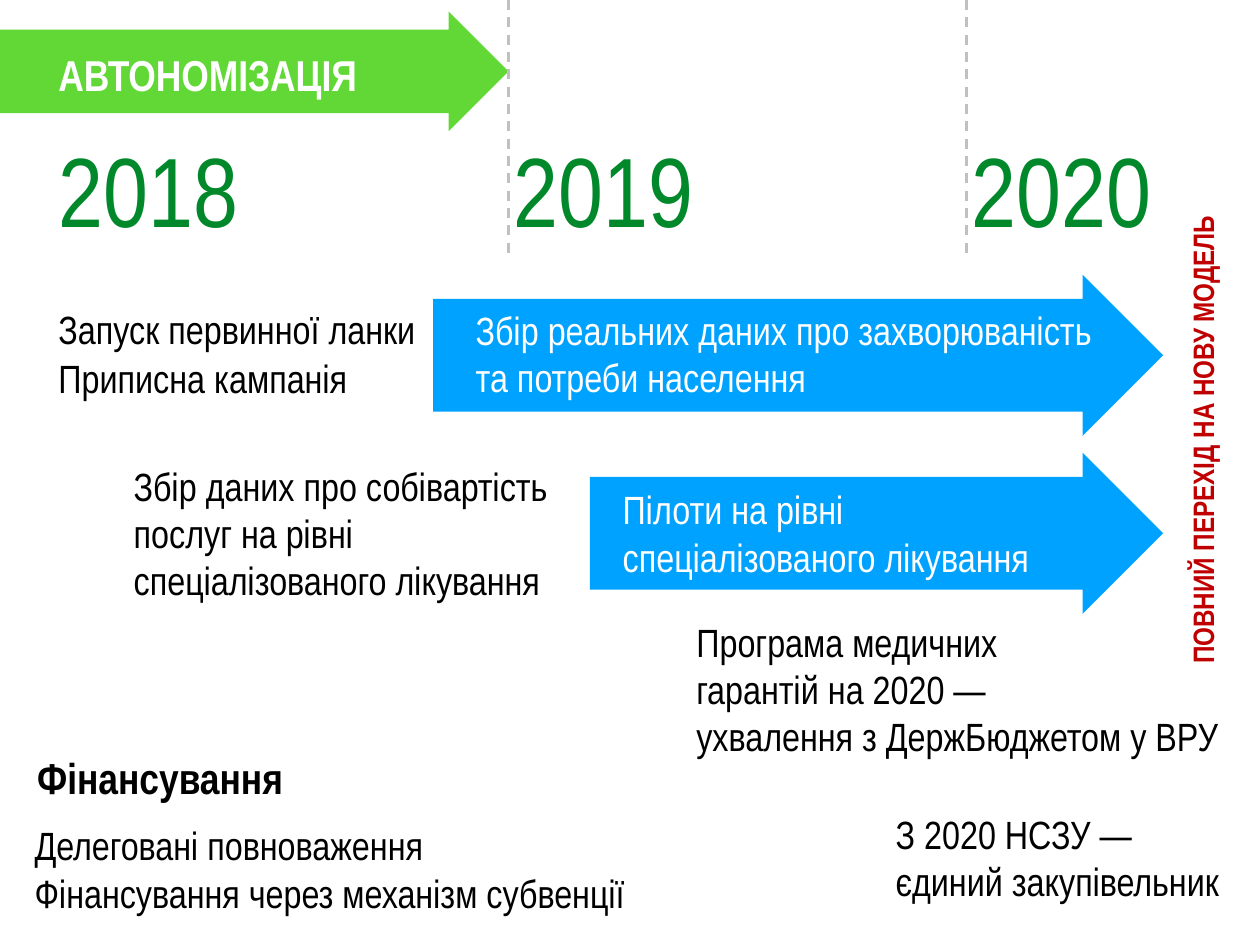
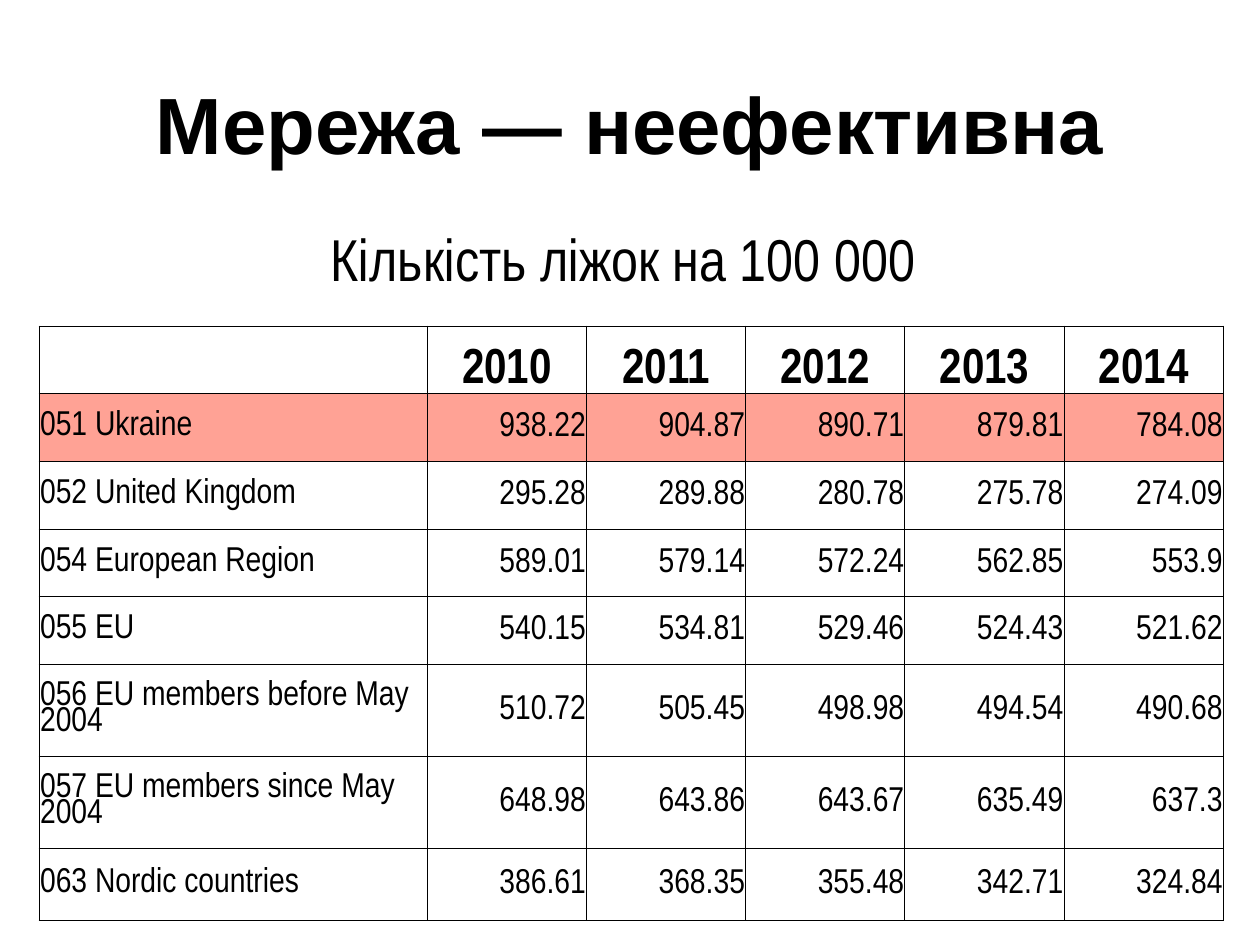
from dataclasses import dataclass

from lxml import etree
from pptx import Presentation
from pptx.dml.color import RGBColor
from pptx.enum.dml import MSO_LINE
from pptx.enum.shapes import MSO_CONNECTOR, MSO_SHAPE
from pptx.enum.text import MSO_ANCHOR, PP_ALIGN
from pptx.oxml.ns import qn
from pptx.slide import Slide
from pptx.table import _Cell
from pptx.text.text import TextFrame
from pptx.util import Pt

RIGHT_ARROW = MSO_SHAPE.RIGHT_ARROW
STRAIGHT = MSO_CONNECTOR.STRAIGHT
DASH = MSO_LINE.DASH
TOP, MIDDLE, BOTTOM = MSO_ANCHOR.TOP, MSO_ANCHOR.MIDDLE, MSO_ANCHOR.BOTTOM
LEFT, CENTER, RIGHT = PP_ALIGN.LEFT, PP_ALIGN.CENTER, PP_ALIGN.RIGHT

COLORS = {
    "black": "000000",
    "white": "FFFFFF",
    "lime": "61D836",
    "blue": "00A2FF",
    "green": "00882B",
    "red": "C00000",
    "grey": "C1BFBF",
    "salmon": "FFA295",
}
NARROW = "Arial Narrow"
INSET = 4.3
BLANK_LAYOUT = 6


@dataclass(frozen=True)
class Style:
    size: float
    color: str = "black"
    bold: bool = False
    font: str = NARROW
    align: PP_ALIGN = LEFT
    anchor: MSO_ANCHOR = MIDDLE
    space_before: float = 0
    line_spacing: float = 1


@dataclass(frozen=True)
class Label:
    left: float
    top: float
    width: float
    height: float
    text: str
    style: Style
    wrap: bool = True
    vertical: bool = False


@dataclass(frozen=True)
class Arrow:
    left: float
    top: float
    width: float
    height: float
    color: str


TITLE = Style(64.8, bold=True, font="Arial", align=CENTER)
SUBTITLE = Style(48, align=CENTER)
HEADING = Style(35.1, bold=True)
BANNER = Style(35.1, "white", bold=True)
YEAR = Style(80, "green", anchor=TOP)
BODY = Style(32, space_before=24)
ARROW_TEXT = Style(32, "white", space_before=24)
SIDE = Style(24, "red", bold=True, align=CENTER)
HEADER_CELL = Style(40, bold=True, align=CENTER, anchor=BOTTOM)
NAME_CELL = Style(28, line_spacing=0.8)
VALUE_CELL = Style(28, align=RIGHT)

ARROWS = [
    Arrow(-162, 9.4, 575.3, 97.2, "lime"),
    Arrow(479.5, 367.9, 465.8, 131, "blue"),
    Arrow(352.1, 223.2, 593.2, 131, "blue"),
]
YEAR_LEFTS = {"2018": 43.2, "2019": 413.3, "2020": 785.5}
TIMELINE_LABELS = [
    Label(43.2, 244.1, 301.7, 46.8, "Запуск первинної ланки", BODY, wrap=False),
    Label(43.2, 283.7, 244.8, 46.8, "Приписна кампанія", BODY, wrap=False),
    Label(382.3, 244.1, 511.9, 85.7,
          "Збір реальних даних про захворюваність\nта потреби населення", ARROW_TEXT),
    Label(104.4, 370.8, 367.2, 124.6,
          "Збір даних про собівартість послуг на рівні спеціалізованого лікування", BODY),
    Label(501.8, 390.2, 343.4, 85.7,
          "Пілоти на рівні\nспеціалізованого лікування", ARROW_TEXT, wrap=False),
    Label(23.8, 663.1, 659.5, 85.7,
          "Делеговані повноваження\nФінансування через механізм субвенції", BODY),
    Label(958.3, 156.2, 37.4, 402.5, "ПОВНИЙ ПЕРЕХІД НА НОВУ МОДЕЛЬ", SIDE, vertical=True),
    Label(561.6, 497.5, 450.7, 124.6,
          "Програма медичних\nгарантій на 2020 —\nухвалення з ДержБюджетом у ВРУ", BODY),
    Label(723.6, 653.8, 290, 85.7, "З 2020 НСЗУ —\nєдиний закупівельник", BODY),
    Label(25.9, 595.4, 242.6, 72, "Фінансування", HEADING),
    Label(43.2, 33.1, 356.4, 54, "АВТОНОМІЗАЦІЯ", BANNER),
]

BEDS_LABELS = [
    Label(100, 44.6, 823.7, 110.2, "Мережа — неефективна", TITLE),
    Label(100, 154.8, 823.7, 110.2, "Кількість ліжок на 100 000 ", SUBTITLE),
]
BEDS = [
    ("", "2010", "2011", "2012", "2013", "2014"),
    ("051 Ukraine", "938.22", "904.87", "890.71", "879.81", "784.08"),
    ("052 United Kingdom", "295.28", "289.88", "280.78", "275.78", "274.09"),
    ("054 European Region", "589.01", "579.14", "572.24", "562.85", "553.9"),
    ("055 EU", "540.15", "534.81", "529.46", "524.43", "521.62"),
    ("056 EU members before May 2004", "510.72", "505.45", "498.98", "494.54", "490.68"),
    ("057 EU members since May 2004", "648.98", "643.86", "643.67", "635.49", "637.3"),
    ("063 Nordic countries", "386.61", "368.35", "355.48", "342.71", "324.84"),
]
COLUMN_WIDTHS = [315.4] + [129.4] * 5
ROW_HEIGHTS = [55] * 5 + [74.8] * 2 + [58.5]
HIGHLIGHT_ROW = 1


def rgb(name: str) -> RGBColor:
    return RGBColor.from_string(COLORS[name])


def write_text(frame: TextFrame, text: str, style: Style) -> None:
    para = frame.paragraphs[0]
    para.alignment = style.align
    para.space_before = Pt(style.space_before)
    para.line_spacing = style.line_spacing
    for index, line in enumerate(text.split("\n")):
        if index:
            para.add_line_break()
        span = para.add_run()
        span.text = line
        span.font.name = style.font
        span.font.size = Pt(style.size)
        span.font.bold = style.bold
        span.font.color.rgb = rgb(style.color)


def draw_label(page: Slide, label: Label) -> None:
    box = page.shapes.add_textbox(
        Pt(label.left), Pt(label.top), Pt(label.width), Pt(label.height))
    frame = box.text_frame
    frame.word_wrap = label.wrap
    frame.vertical_anchor = label.style.anchor
    frame.margin_left = frame.margin_right = Pt(INSET)
    frame.margin_top = frame.margin_bottom = Pt(INSET)
    if label.vertical:
        box.element.txBody.find(qn("a:bodyPr")).set("vert", "vert270")
    write_text(frame, label.text, label.style)


def draw_arrow(page: Slide, arrow: Arrow) -> None:
    shape = page.shapes.add_shape(
        RIGHT_ARROW, Pt(arrow.left), Pt(arrow.top), Pt(arrow.width), Pt(arrow.height))
    shape.adjustments[0] = 0.7
    shape.adjustments[1] = 0.5
    shape.shadow.inherit = False
    shape.fill.solid()
    shape.fill.fore_color.rgb = rgb(arrow.color)
    shape.line.fill.background()


def draw_divider(page: Slide, left: float) -> None:
    divider = page.shapes.add_connector(STRAIGHT, Pt(left), Pt(0), Pt(left), Pt(206))
    divider.line.color.rgb = rgb("grey")
    divider.line.width = Pt(2)
    divider.line.dash_style = DASH
    etree.SubElement(divider.element.spPr, qn("a:effectLst"))


def set_borders(cell: _Cell) -> None:
    properties = cell._tc.get_or_add_tcPr()
    for index, side in enumerate(("a:lnL", "a:lnR", "a:lnT", "a:lnB")):
        border = etree.Element(qn(side), w=str(Pt(1)))
        fill = etree.SubElement(border, qn("a:solidFill"))
        etree.SubElement(fill, qn("a:srgbClr"), val=COLORS["black"])
        properties.insert(index, border)


def draw_cell(cell: _Cell, text: str, style: Style, highlighted: bool) -> None:
    cell.margin_left = cell.margin_right = cell.margin_top = Pt(0.7)
    cell.margin_bottom = Pt(0)
    cell.vertical_anchor = style.anchor
    if highlighted:
        cell.fill.solid()
        cell.fill.fore_color.rgb = rgb("salmon")
    else:
        cell.fill.background()
    set_borders(cell)
    if text:
        write_text(cell.text_frame, text, style)


def draw_beds_table(page: Slide) -> None:
    table = page.shapes.add_table(
        len(BEDS), len(COLUMN_WIDTHS), Pt(31.9), Pt(265),
        Pt(sum(COLUMN_WIDTHS)), Pt(sum(ROW_HEIGHTS))).table
    table.first_row = table.horz_banding = False
    for column, width in zip(table.columns, COLUMN_WIDTHS):
        column.width = Pt(width)
    for row, height in zip(table.rows, ROW_HEIGHTS):
        row.height = Pt(height)
    for row_index, values in enumerate(BEDS):
        for column_index, text in enumerate(values):
            body_style = VALUE_CELL if column_index else NAME_CELL
            style = body_style if row_index else HEADER_CELL
            draw_cell(table.cell(row_index, column_index), text, style,
                      row_index == HIGHLIGHT_ROW)


def build_timeline(page: Slide) -> None:
    for arrow in ARROWS:
        draw_arrow(page, arrow)
    for year, left in YEAR_LEFTS.items():
        draw_label(page, Label(left, 100.8, 227.5, 87.1, year, YEAR))
    for label in TIMELINE_LABELS:
        draw_label(page, label)
    for year in ("2019", "2020"):
        draw_divider(page, YEAR_LEFTS[year])


def build_beds(page: Slide) -> None:
    draw_beds_table(page)
    for label in BEDS_LABELS:
        draw_label(page, label)


def main() -> None:
    deck = Presentation()
    deck.slide_width, deck.slide_height = Pt(1024), Pt(768)
    for build in (build_timeline, build_beds):
        build(deck.slides.add_slide(deck.slide_layouts[BLANK_LAYOUT]))
    deck.save("out.pptx")


if __name__ == "__main__":
    main()
